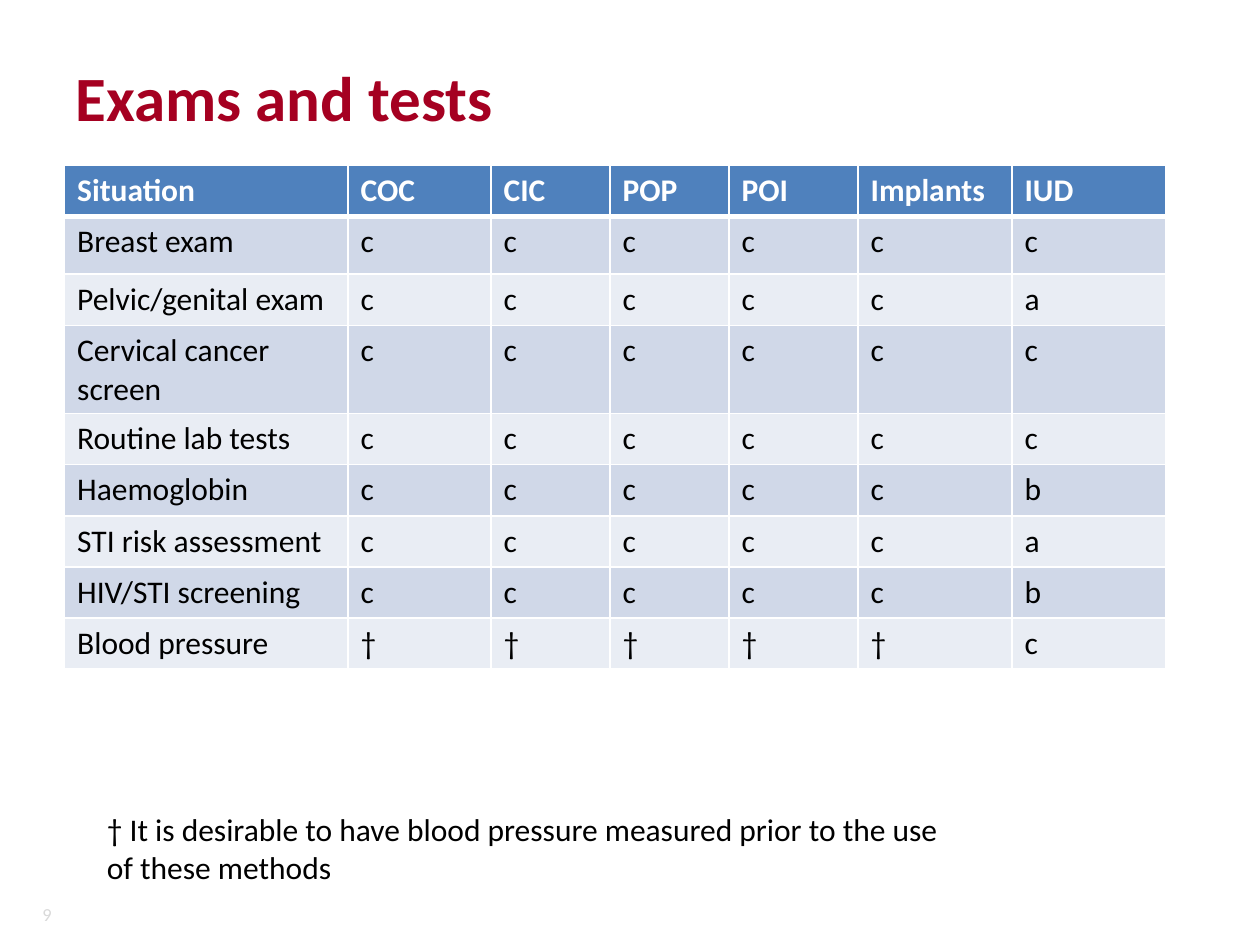
from pptx import Presentation
from pptx.dml.color import RGBColor
from pptx.enum.text import MSO_ANCHOR, PP_ALIGN
from pptx.oxml import parse_xml
from pptx.oxml.ns import nsdecls
from pptx.util import Pt

SITUATIONS = {
    "Breast exam": "cccccc",
    "Pelvic/genital exam": "ccccca",
    "Cervical cancer screen": "cccccc",
    "Routine lab tests": "cccccc",
    "Haemoglobin": "cccccb",
    "STI risk assessment": "ccccca",
    "HIV/STI screening": "cccccb",
    "Blood pressure": "†††††c",
}
METHODS = ["COC", "CIC", "POP", "POI", "Implants", "IUD"]
COLUMN_WIDTHS = [162, 81.75, 68, 68, 73.75, 88, 88]
ROW_HEIGHT = 29.2
FIRST_ROW_HEIGHT = 33


def color(value):
    return RGBColor.from_string(value)


class SlideBuilder:
    font_name = "Calibri"
    red, black, white, grey = "A50021", "000000", "FFFFFF", "D9D9D9"
    header_fill = "4F81BD"
    band_fills = ["D0D8E8", "E9EDF4"]

    def __init__(self, deck):
        self.page = deck.slides.add_slide(deck.slide_layouts[6])

    def add_span(self, frame, text, shade, size=18, bold=False, align=PP_ALIGN.LEFT):
        para = frame.paragraphs[0]
        para.alignment = align
        span = para.add_run()
        span.text = text
        formats = {"name": self.font_name, "size": Pt(size), "bold": bold}
        for key, value in formats.items():
            setattr(span.font, key, value)
        span.font.color.rgb = color(shade)

    def add_text(self, bounds, text, shade, anchor=MSO_ANCHOR.MIDDLE, **formats):
        box = self.page.shapes.add_textbox(*map(Pt, bounds))
        frame = box.text_frame
        frame.word_wrap = True
        frame.vertical_anchor = anchor
        self.add_span(frame, text, shade, **formats)

    def add_borders(self, cell, widths):
        """Draw white borders, with widths in points keyed by side letter."""
        properties = cell._tc.get_or_add_tcPr()
        for side, width in widths.items():
            properties.append(parse_xml(
                f'<a:ln{side} {nsdecls("a")} w="{Pt(width)}"><a:solidFill>'
                f'<a:srgbClr val="{self.white}"/></a:solidFill></a:ln{side}>'))

    def add_table(self, left, top, rows, widths, heights):
        bounds = map(Pt, (left, top, sum(widths), sum(heights)))
        table = self.page.shapes.add_table(len(rows), len(widths), *bounds).table
        for column, width in zip(table.columns, widths):
            column.width = Pt(width)
        for index, (row, height) in enumerate(zip(rows, heights)):
            table.rows[index].height = Pt(height)
            header = index == 0
            fill = self.header_fill if header else self.band_fills[(index - 1) % 2]
            sides = {"L": 1, "R": 1, "T": 3 if index == 1 else 1, "B": 3 if header else 1}
            for cell, text in zip(table.rows[index].cells, row):
                self.add_borders(cell, sides)
                cell.fill.solid()
                cell.fill.fore_color.rgb = color(fill)
                self.add_span(cell.text_frame, text,
                              self.white if header else self.black, bold=header)


def main():
    deck = Presentation()
    deck.slide_width, deck.slide_height = Pt(720), Pt(540)
    builder = SlideBuilder(deck)
    builder.add_text((8.64, 514, 28, 17.3), "9", builder.grey, size=10.5,
                     align=PP_ALIGN.RIGHT)
    builder.add_text((36, 21.6, 648, 67), "Exams and tests", builder.red,
                     size=36, bold=True)
    rows = [["Situation", *METHODS]]
    rows += [[situation, *grades] for situation, grades in SITUATIONS.items()]
    heights = [ROW_HEIGHT, FIRST_ROW_HEIGHT] + [ROW_HEIGHT] * (len(rows) - 2)
    builder.add_table(36.9, 94.5, rows, COLUMN_WIDTHS, heights)
    builder.add_text((54, 459.4, 493, 51), "† It is desirable to have blood pressure "
                     "measured prior to the use of these methods", builder.black,
                     anchor=MSO_ANCHOR.TOP)
    deck.save("out.pptx")


if __name__ == "__main__":
    main()
